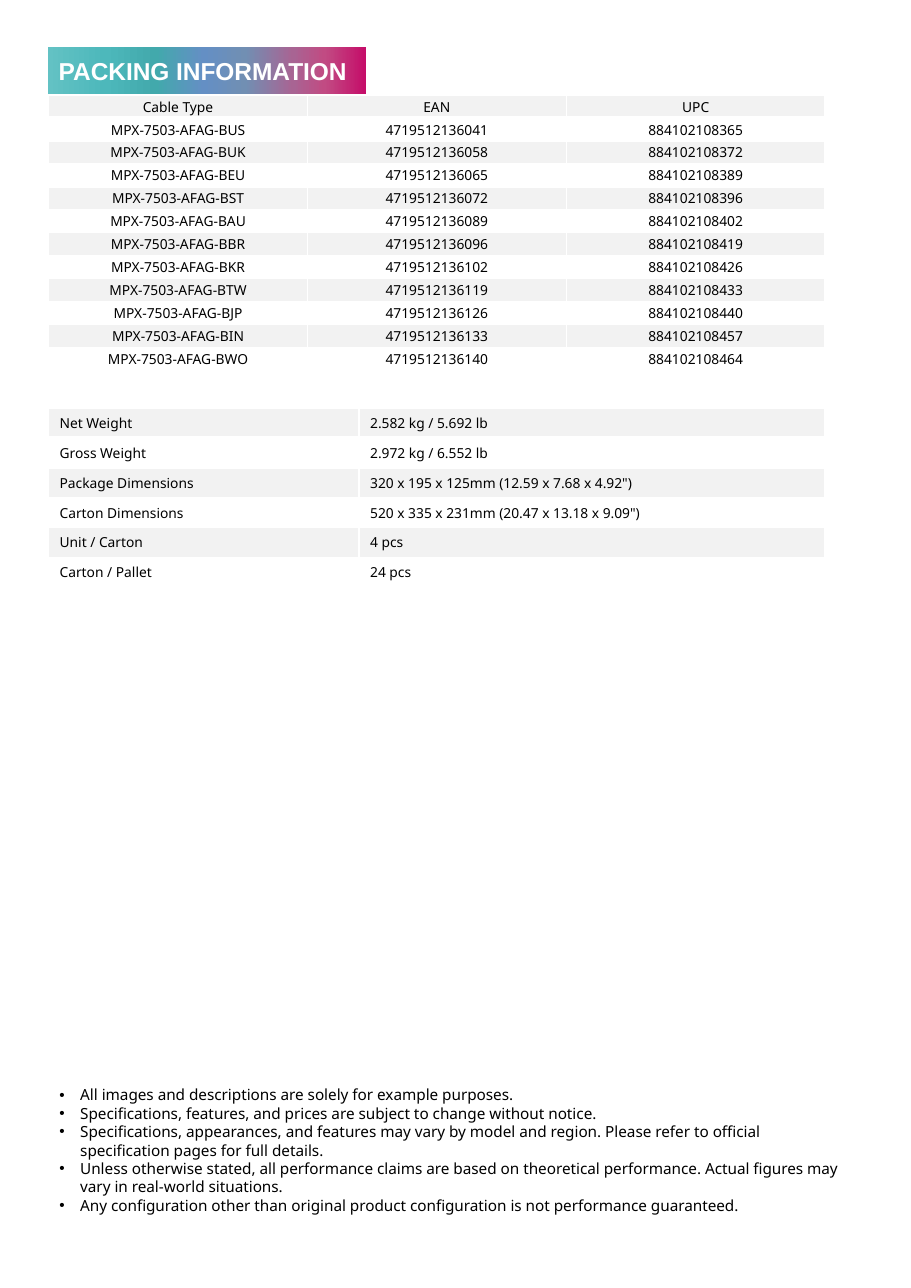
import pptx
import pptx.dml.color
import pptx.enum.text
import pptx.oxml
import pptx.oxml.ns
import pptx.util
from lxml import etree

Cm = pptx.util.Cm
Pt = pptx.util.Pt
RGBColor = pptx.dml.color.RGBColor
qn = pptx.oxml.ns.qn
LEFT = pptx.enum.text.PP_ALIGN.LEFT
CENTER = pptx.enum.text.PP_ALIGN.CENTER
MIDDLE = pptx.enum.text.MSO_ANCHOR.MIDDLE

WHITE = RGBColor(0xFF, 0xFF, 0xFF)
BLACK = RGBColor(0x00, 0x00, 0x00)
BAND_GREY = RGBColor(0xF2, 0xF2, 0xF2)
BANNER_STOPS = [
    (0, RGBColor(0x63, 0xC2, 0xC4)),
    (18, RGBColor(0x4D, 0xB8, 0xBB)),
    (34, RGBColor(0x42, 0xA9, 0xAC)),
    (49, RGBColor(0x64, 0x8F, 0xC4)),
    (62, RGBColor(0x71, 0x8F, 0xB3)),
    (77, RGBColor(0xA8, 0x64, 0x93)),
    (87, RGBColor(0xC1, 0x4B, 0x83)),
    (100, RGBColor(0xC5, 0x0D, 0x69)),
]

TITLE_FONT = {"name": "Arial", "size": Pt(16), "bold": True}
TABLE_FONT = {"name": "Noto Sans", "size": Pt(9), "bold": False}
NOTE_FONT = {"name": "Noto Sans", "size": Pt(10)}

CABLES = [
    ("Cable Type", "EAN", "UPC"),
    ("MPX-7503-AFAG-BUS", "4719512136041", "884102108365"),
    ("MPX-7503-AFAG-BUK", "4719512136058", "884102108372"),
    ("MPX-7503-AFAG-BEU", "4719512136065", "884102108389"),
    ("MPX-7503-AFAG-BST", "4719512136072", "884102108396"),
    ("MPX-7503-AFAG-BAU", "4719512136089", "884102108402"),
    ("MPX-7503-AFAG-BBR", "4719512136096", "884102108419"),
    ("MPX-7503-AFAG-BKR", "4719512136102", "884102108426"),
    ("MPX-7503-AFAG-BTW", "4719512136119", "884102108433"),
    ("MPX-7503-AFAG-BJP", "4719512136126", "884102108440"),
    ("MPX-7503-AFAG-BIN", "4719512136133", "884102108457"),
    ("MPX-7503-AFAG-BWO", "4719512136140", "884102108464"),
]
PACKAGE = [
    ("Net Weight", "2.582 kg / 5.692 lb"),
    ("Gross Weight", "2.972 kg / 6.552 lb"),
    ("Package Dimensions", '320 x 195 x 125mm (12.59 x 7.68 x 4.92")'),
    ("Carton Dimensions", '520 x 335 x 231mm (20.47 x 13.18 x 9.09")'),
    ("Unit / Carton", "4 pcs"),
    ("Carton / Pallet", "24 pcs"),
]
NOTES = [
    "All images and descriptions are solely for example purposes.",
    "Specifications, features, and prices are subject to change without notice.",
    "Specifications, appearances, and features may vary by model and region. "
    "Please refer to official specification pages for full details.",
    "Unless otherwise stated, all performance claims are based on theoretical "
    "performance. Actual figures may vary in real-world situations.",
    "Any configuration other than original product configuration is not "
    "performance guaranteed.",
]


def set_values(target, values):
    for name, value in values.items():
        setattr(target, name, value)


def set_font(font, values, color):
    set_values(font, values)
    font.color.rgb = color


def add_banner(page, box, text):
    title = page.shapes.title
    set_values(title, dict(zip(("left", "top", "width", "height"), box)))

    # Gradient from teal to magenta
    title.fill.gradient()
    title.fill.gradient_angle = 0
    stops = title._element.spPr.find(qn("a:gradFill")).find(qn("a:gsLst"))
    for stop in list(stops):
        stops.remove(stop)
    for percent, color in BANNER_STOPS:
        stop = etree.SubElement(stops, qn("a:gs"), pos=str(percent * 1000))
        etree.SubElement(stop, qn("a:srgbClr"), val=str(color))

    # Heading
    frame = title.text_frame
    set_values(frame, {
        "text": text,
        "word_wrap": True,
        "auto_size": pptx.enum.text.MSO_AUTO_SIZE.NONE,
        "vertical_anchor": MIDDLE,
    })
    para = frame.paragraphs[0]
    para.alignment = LEFT
    set_font(para.font, TITLE_FONT, WHITE)


def add_borders(cell, bottom_width):
    properties = cell._tc.get_or_add_tcPr()
    widths = {"a:lnL": 1, "a:lnR": 1, "a:lnT": 1, "a:lnB": bottom_width}
    for side, width in widths.items():
        line = etree.SubElement(properties, qn(side), w=str(Pt(width)))
        fill = etree.SubElement(line, qn("a:solidFill"))
        etree.SubElement(fill, qn("a:srgbClr"), val=str(WHITE))


def add_banded_table(page, box, rows, shares, alignment, cell_format):
    left, top, width, height = box
    table = page.shapes.add_table(
        len(rows), len(shares), left, top, width, height).table
    for column, share in zip(table.columns, shares):
        column.width = int(width * share / sum(shares))
    for row_index, row in enumerate(rows):
        for column_index, text in enumerate(row):
            cell = table.cell(row_index, column_index)
            set_values(cell, {"text": text, "vertical_anchor": MIDDLE} | cell_format)
            add_borders(cell, 3 if row_index == 0 else 1)
            cell.fill.solid()
            cell.fill.fore_color.rgb = WHITE if row_index % 2 else BAND_GREY
            para = cell.text_frame.paragraphs[0]
            para.alignment = alignment
            set_font(para.font, TABLE_FONT, BLACK)


def add_notes(page, box, notes):
    frame = page.shapes.add_textbox(*box).text_frame
    frame.word_wrap = True
    frame.auto_size = pptx.enum.text.MSO_AUTO_SIZE.SHAPE_TO_FIT_TEXT
    indent = Cm(0.48)
    for index, note in enumerate(notes):
        para = frame.add_paragraph() if index else frame.paragraphs[0]
        para.text = note
        properties = para._p.get_or_add_pPr()
        properties.set("marL", str(indent))
        properties.set("indent", str(-indent))
        etree.SubElement(properties, qn("a:buFont"), typeface="Arial")
        etree.SubElement(properties, qn("a:buChar"), char="•")
        set_font(para.font, NOTE_FONT, BLACK)


def main():
    deck = pptx.Presentation()
    deck.slide_width, deck.slide_height = Cm(21), Cm(29.7)
    page = deck.slides.add_slide(deck.slide_layouts[5])

    margin, table_width = Cm(1.12), Cm(17.9)
    no_insets = dict.fromkeys(
        ("margin_left", "margin_top", "margin_right", "margin_bottom"), 0)

    add_banner(page, (Cm(1.1), Cm(1.08), Cm(7.34), Cm(1.08)), "PACKING INFORMATION")
    # Weights and dimensions
    add_banded_table(page, (margin, Cm(9.42), table_width, Cm(3.81)),
                     PACKAGE, (2, 3), LEFT, {})
    # Codes by cable type
    add_banded_table(page, (margin, Cm(2.2), table_width, Cm(6.34)),
                     CABLES, (1, 1, 1), CENTER, no_insets)
    add_notes(page, (margin, Cm(24.91), Cm(18.64), Cm(3.25)), NOTES)

    deck.save("out.pptx")


if __name__ == "__main__":
    main()
